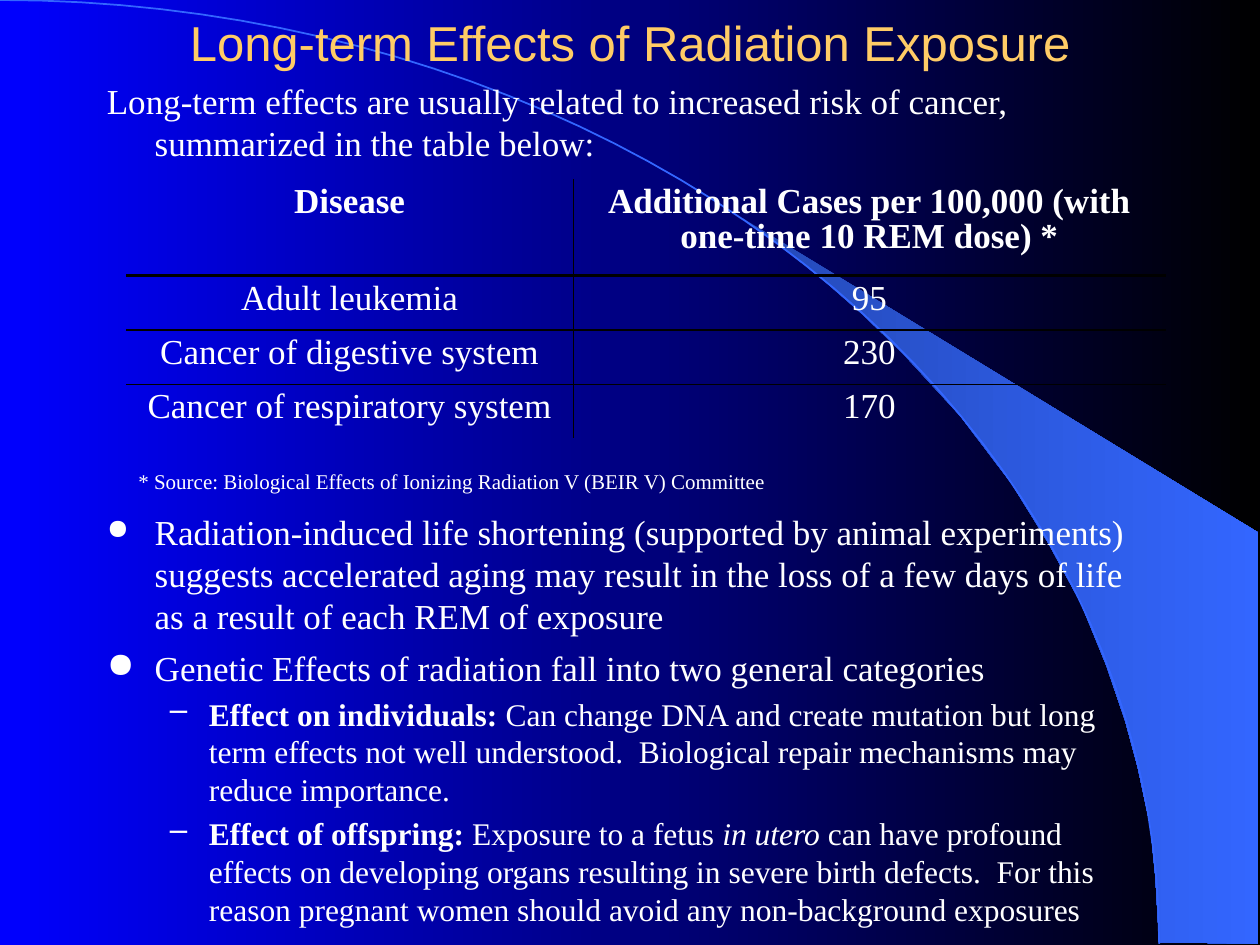
"""Build the slide on long-term effects of radiation exposure."""
from math import cos, radians, sin

from lxml.etree import SubElement
from pptx import Presentation
from pptx.dml.color import RGBColor
from pptx.enum.text import MSO_ANCHOR, PP_ALIGN
from pptx.oxml import parse_xml
from pptx.oxml.ns import nsdecls, qn
from pptx.util import Inches, Pt

WHITE = "FFFFFF"


def shade(fill, start, end):
    fill.gradient()
    fill.gradient_angle = 0
    for stop, tone, spot in zip(fill.gradient_stops, (start, end), (0, 1)):
        stop.color.rgb = RGBColor.from_string(tone)
        stop.position = spot


def write(par, runs, size, tone=WHITE, face="Times New Roman"):
    par.font.size = Pt(size)
    par.font.name = face
    par.font.color.rgb = RGBColor.from_string(tone)
    for text, style in runs:
        run = par.add_run()
        run.text = text
        if style:
            setattr(run.font, style, True)


deck = Presentation()
deck.slide_width, deck.slide_height = Inches(10), Inches(7.5)
slide = deck.slides.add_slide(deck.slide_layouts[5])
shapes = slide.shapes
shade(slide.background.fill, "0000FF", "000000")

beam = [(9.2, 7.48), (9.99, 7.49), (9.99, 4.23), (5.89, 1.73), (6.24, 1.99),
        (6.53, 2.22), (6.85, 2.5), (7.16, 2.8), (7.62, 3.3), (8.03, 3.84),
        (8.32, 4.31), (8.58, 4.79), (8.78, 5.28), (8.93, 5.72), (9.03, 6.09),
        (9.13, 6.56), (9.17, 6.96)]
arc = [(9.2 * sin(radians(a)), 7.49 * (1 - cos(radians(a))))
       for a in range(0, 91, 2)]
for points, closed in ((beam, True), (arc, False)):
    spots = [(Inches(x), Inches(y)) for x, y in points]
    pen = shapes.build_freeform(*spots[0])
    pen.add_line_segments(spots[1:], close=closed)
    shape = pen.convert_to_shape()
    shape.shadow.inherit = False
    if closed:
        shade(shape.fill, "2449B6", "3366FF")
        shape.line.fill.background()
    else:
        shape.fill.background()
        shape.line.color.rgb = RGBColor.from_string("3366FF")
        shape.line.width = Pt(1)

title = shapes.title
shapes._spTree.append(title._element)
title.left, title.top = Inches(0.75), Inches(0.08)
title.width, title.height = Inches(8.5), Inches(0.5)
title.text_frame.vertical_anchor = MSO_ANCHOR.MIDDLE
head = title.text_frame.paragraphs[0]
head.alignment = PP_ALIGN.CENTER
write(head, [("Long-term Effects of Radiation Exposure", None)],
      28, "FFCC66", "Arial")

blocks = [
    (0.58, 0.92, [
        (None, 100, 20, [("Long-term effects are usually related to increased risk of "
                          "cancer, summarized in the table below:", None)])]),
    (4, 1, [
        ("●", 80, 20, [("Radiation-induced life shortening (supported by animal "
                        "experiments) suggests accelerated aging may result in the loss "
                        "of a few days of life as a result of each REM of exposure",
                        None)])]),
    (5.08, 2.42, [
        ("●", 100, 20, [("Genetic Effects of radiation fall into two general "
                         "categories", None)]),
        ("–", 100, 18, [("Effect on individuals:", "bold"),
                        (" Can change DNA and create mutation but long term effects "
                         "not well understood.  Biological repair mechanisms may "
                         "reduce importance.", None)]),
        ("–", 100, 18, [("Effect of offspring:", "bold"),
                        (" Exposure to a fetus ", None), ("in utero", "italic"),
                        (" can have profound effects on developing organs resulting "
                         "in severe birth defects.  For this reason pregnant women "
                         "should avoid any non-background exposures", None)])]),
]
for top, height, items in blocks:
    frame = shapes.add_textbox(Inches(0.75), Inches(top), Inches(8.5),
                               Inches(height)).text_frame
    frame.word_wrap = True
    for i, (mark, scale, size, runs) in enumerate(items):
        par = frame.add_paragraph() if i else frame.paragraphs[0]
        par.space_before = Pt(size * 0.2)
        par.level = 1 if mark == "–" else 0
        left, hang = (0.81, 0.31) if par.level else (0.38, 0.38)
        props = par._p.get_or_add_pPr()
        props.set("marL", str(Inches(left)))
        props.set("indent", str(-Inches(hang)))
        if mark:
            tint = SubElement(SubElement(props, qn("a:buClr")), qn("a:srgbClr"))
            tint.set("val", WHITE)
            SubElement(props, qn("a:buSzPct")).set("val", str(scale * 1000))
            SubElement(props, qn("a:buChar")).set("char", mark)
        write(par, runs, size)

rows = [("Disease", "Additional Cases per 100,000 (with one-time 10 REM dose) *"),
        ("Adult leukemia", "95"),
        ("Cancer of digestive system", "230"),
        ("Cancer of respiratory system", "170")]
grid = shapes.add_table(4, 2, Inches(1), Inches(1.42), Inches(8.25), Inches(2.06))
table = grid.table
table.first_row = table.horz_banding = False
for col, width in zip(table.columns, (3.55, 4.7)):
    col.width = Inches(width)
for r, texts in enumerate(rows):
    table.rows[r].height = Inches(0.43 if r else 0.77)
    for c, text in enumerate(texts):
        cell = table.cell(r, c)
        par = cell.text_frame.paragraphs[0]
        par.alignment = PP_ALIGN.CENTER
        par.line_spacing = 0.9
        write(par, [(text, None if r else "bold")], 20)
        above = (0, 2, 1, 1)[r]
        below = (2, 1, 1, 0)[r]
        props = cell._tc.get_or_add_tcPr()
        for side, width in (("L", c), ("R", 1 - c), ("T", above), ("B", below)):
            paint = ('<a:solidFill><a:srgbClr val="000000"/></a:solidFill>'
                     if width else "<a:noFill/>")
            props.append(parse_xml(
                f'<a:ln{side} {nsdecls("a")} w="{Pt(width)}">{paint}</a:ln{side}>'))
        cell.fill.background()

note = shapes.add_textbox(Inches(1), Inches(3.67), Inches(5.21), Inches(0.3))
note.text_frame.word_wrap = False
note.text_frame.vertical_anchor = MSO_ANCHOR.MIDDLE
write(note.text_frame.paragraphs[0],
      [("* Source: Biological Effects of Ionizing Radiation V (BEIR V) Committee",
        None)], 12)

deck.save("out.pptx")
